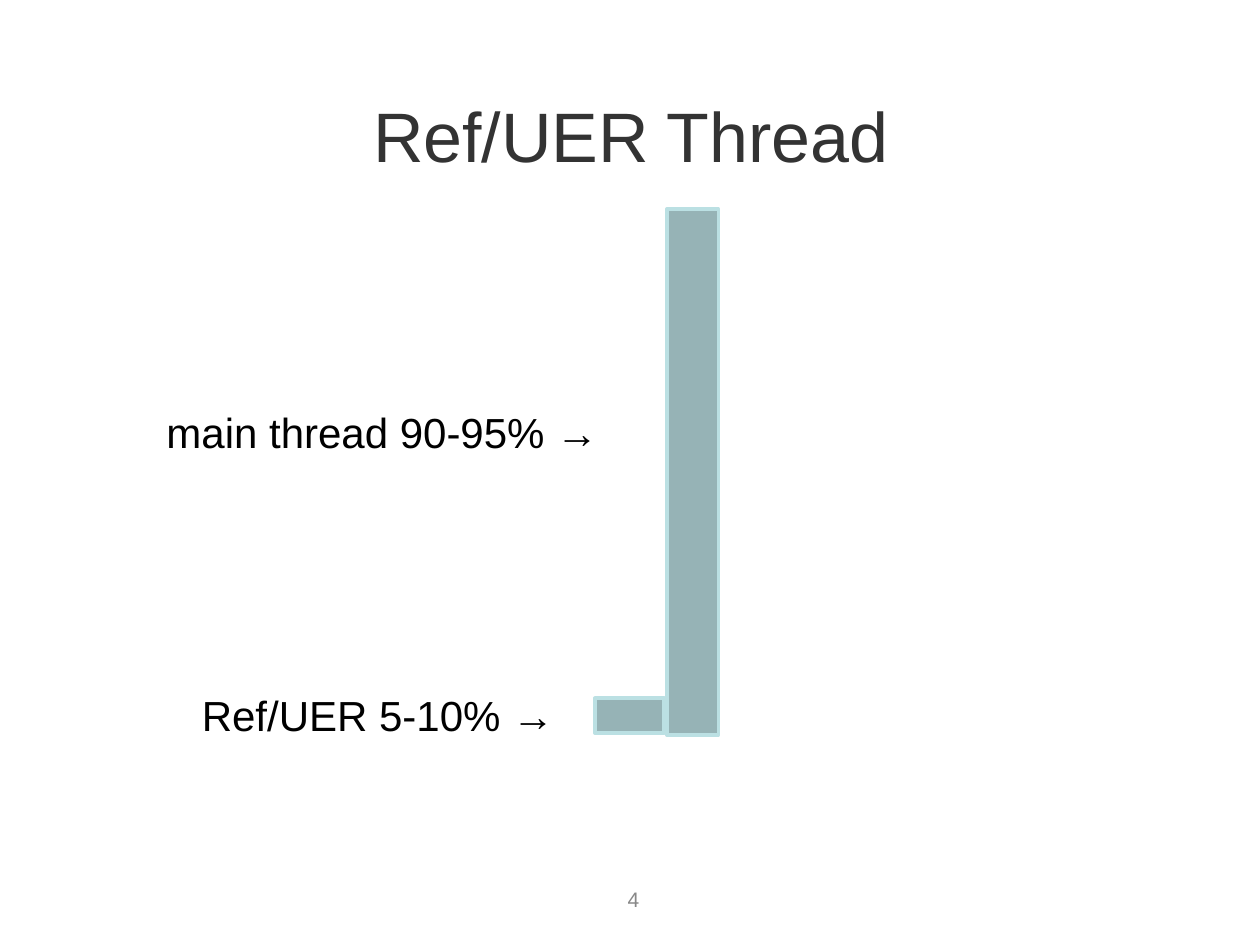
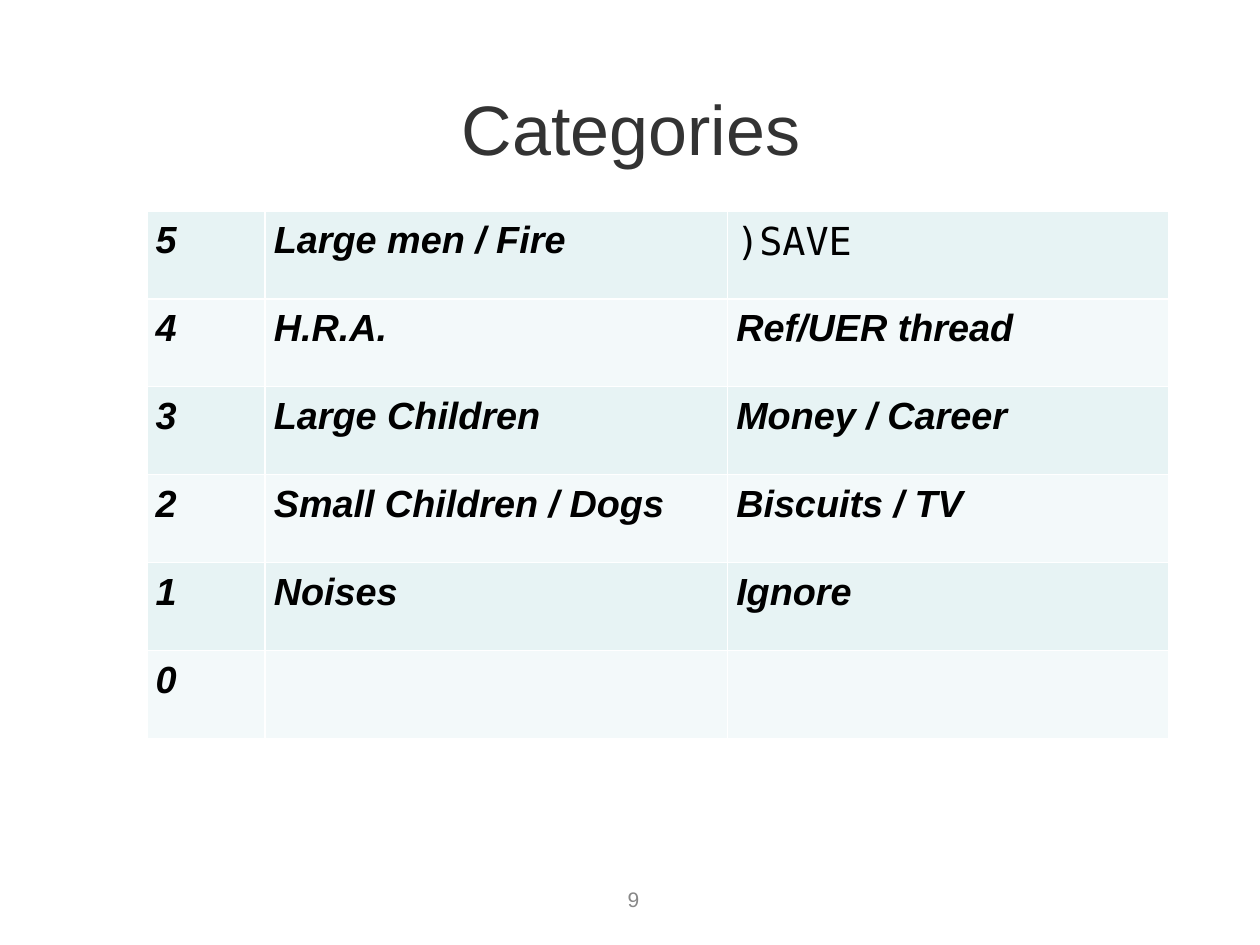
from pptx import Presentation
from pptx.dml.color import RGBColor
from pptx.enum.shapes import MSO_SHAPE
from pptx.enum.text import MSO_ANCHOR, MSO_AUTO_SIZE, PP_ALIGN
from pptx.util import Pt

RECTANGLE = MSO_SHAPE.RECTANGLE
TOP, MIDDLE = MSO_ANCHOR.TOP, MSO_ANCHOR.MIDDLE
LEFT, CENTER = PP_ALIGN.LEFT, PP_ALIGN.CENTER
NO_FIT, GROW = MSO_AUTO_SIZE.NONE, MSO_AUTO_SIZE.SHAPE_TO_FIT_TEXT
TITLE_ONLY = 5

COLORS = {
    "title": "333333",
    "text": "000000",
    "page_number": "888888",
    "bar": "96B3B6",
    "bar_edge": "BBE0E3",
    "odd_row": "E7F3F4",
    "even_row": "F3F9FA",
}
BODY_FONT = "Arial"
CODE_FONT = "DejaVu Sans Mono"
INSET = 3.6
CELL_INSET = 5

CATEGORIES = [
    ("5", "Large men / Fire", ")SAVE"),
    ("4", "H.R.A.", "Ref/UER thread"),
    ("3", "Large Children", "Money / Career"),
    ("2", "Small Children / Dogs", "Biscuits / TV"),
    ("1", "Noises", "Ignore"),
    ("0", "", ""),
]


def color(name):
    return RGBColor.from_string(COLORS[name])


def write(frame, text, size=24, font=BODY_FONT, ink="text", align=LEFT,
          bold=False, italic=False):
    para = frame.paragraphs[0]
    para.alignment = align
    span = para.add_run()
    span.text = text
    span.font.size = Pt(size)
    span.font.name = font
    span.font.bold = bold
    span.font.italic = italic
    span.font.color.rgb = color(ink)


def set_margins(target, inset):
    """Give a text frame or a table cell the same inset on all sides."""
    target.margin_left = target.margin_right = Pt(inset)
    target.margin_top = target.margin_bottom = Pt(inset)


class DeckBuilder:
    """Holds the deck, its style and the current page."""

    def __init__(self):
        self.deck = Presentation()
        self.deck.slide_width, self.deck.slide_height = Pt(720), Pt(540)
        self.page = None

    def start_page(self, title, number, title_inset=INSET):
        layout = self.deck.slide_layouts[TITLE_ONLY]
        self.page = self.deck.slides.add_slide(layout)
        self.label(str(number), 281, 502.5, 162, 22.5, wrap=True,
                   anchor=MIDDLE, size=12, ink="page_number", align=CENTER)
        holder = self.page.shapes.title
        holder.left, holder.top = Pt(60), Pt(49)
        holder.width, holder.height = Pt(601), Pt(85)
        frame = holder.text_frame
        frame.auto_size = NO_FIT
        frame.vertical_anchor = TOP
        set_margins(frame, title_inset)
        write(frame, title, size=40, ink="title", align=CENTER)

    def label(self, text, left, top, width, height, wrap=False, anchor=TOP,
              **style):
        box = self.page.shapes.add_textbox(Pt(left), Pt(top), Pt(width), Pt(height))
        frame = box.text_frame
        frame.word_wrap = wrap
        frame.auto_size = GROW
        frame.vertical_anchor = anchor
        set_margins(frame, INSET)
        write(frame, text, **style)

    def bar(self, left, top, width, height):
        shape = self.page.shapes.add_shape(
            RECTANGLE, Pt(left), Pt(top), Pt(width), Pt(height))
        shape.shadow.inherit = False
        shape.fill.solid()
        shape.fill.fore_color.rgb = color("bar")
        shape.line.color.rgb = color("bar_edge")
        shape.line.width = Pt(2)

    def table(self, rows, left, top, column_widths, row_height):
        """Add a table with two alternating row colours."""
        table = self.page.shapes.add_table(
            len(rows), len(column_widths), Pt(left), Pt(top),
            Pt(sum(column_widths)), Pt(row_height * len(rows))).table
        table.first_row = False
        for column, width in zip(table.columns, column_widths):
            column.width = Pt(width)
        for index, texts in enumerate(rows):
            table.rows[index].height = Pt(row_height)
            for cell, text in zip(table.rows[index].cells, texts):
                cell.fill.solid()
                cell.fill.fore_color.rgb = color("even_row" if index % 2 else "odd_row")
                set_margins(cell, CELL_INSET)
                if text.startswith(")"):
                    write(cell.text_frame, text, size=22, font=CODE_FONT)
                elif text:
                    write(cell.text_frame, text, size=21.6, bold=True, italic=True)


def build_thread_page(builder):
    builder.start_page("Ref/UER Thread", 4)
    builder.bar(381, 119.5, 29.5, 300.5)
    builder.bar(340, 399, 39.6, 20)
    builder.label("main thread 90-95% →", 91.5, 228.5, 281, 37.5)
    builder.label("Ref/UER 5-10% →", 111.75, 390.5, 222, 37.5)


def build_categories_page(builder):
    builder.start_page("Categories", 9, title_inset=0)
    builder.table(CATEGORIES, 84, 120.5, (67.5, 264.25, 252), 50.25)


def main():
    builder = DeckBuilder()
    build_thread_page(builder)
    build_categories_page(builder)
    builder.deck.save("out.pptx")


if __name__ == "__main__":
    main()
